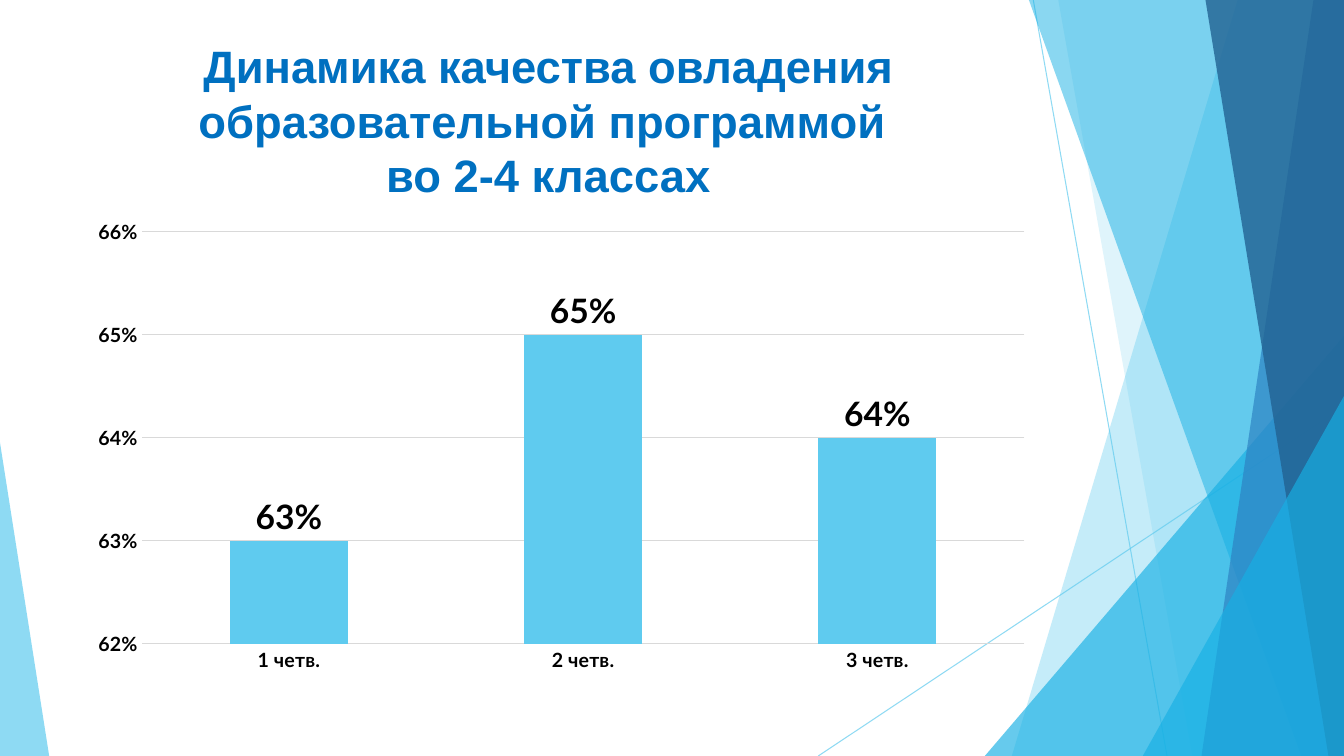
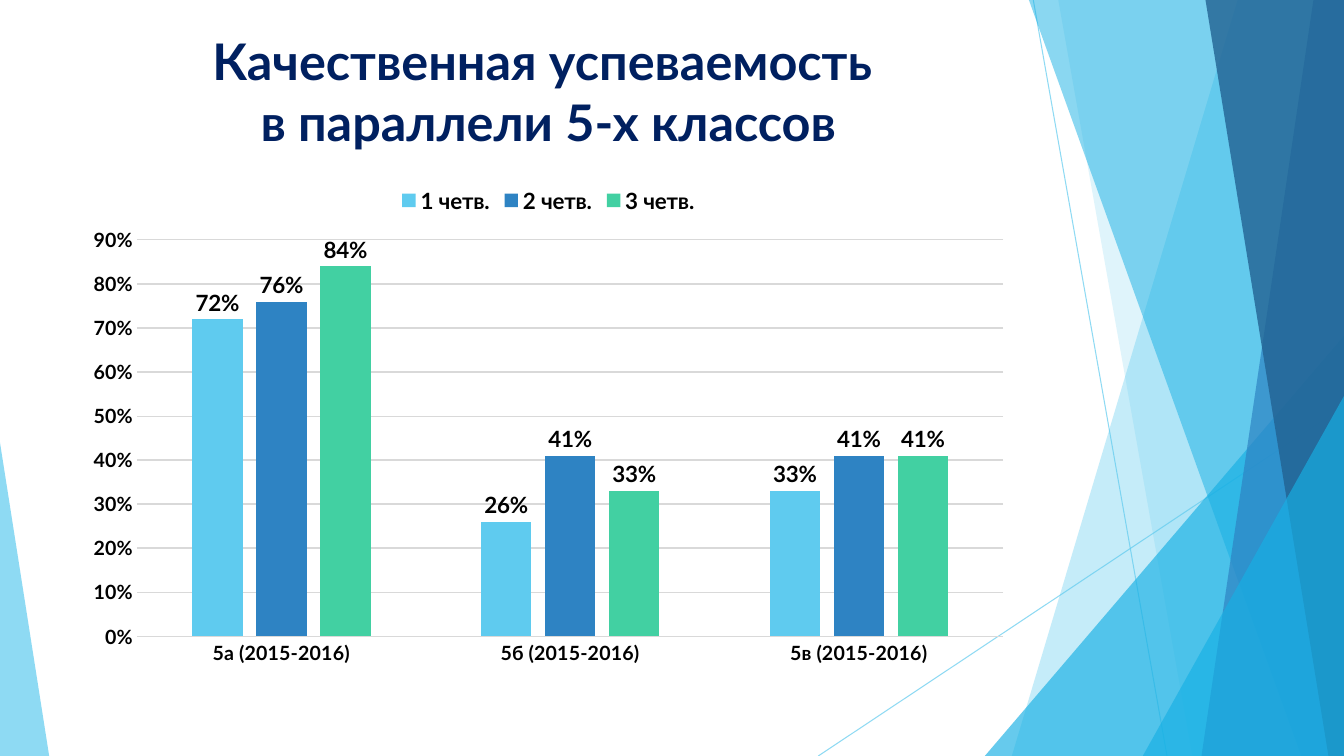
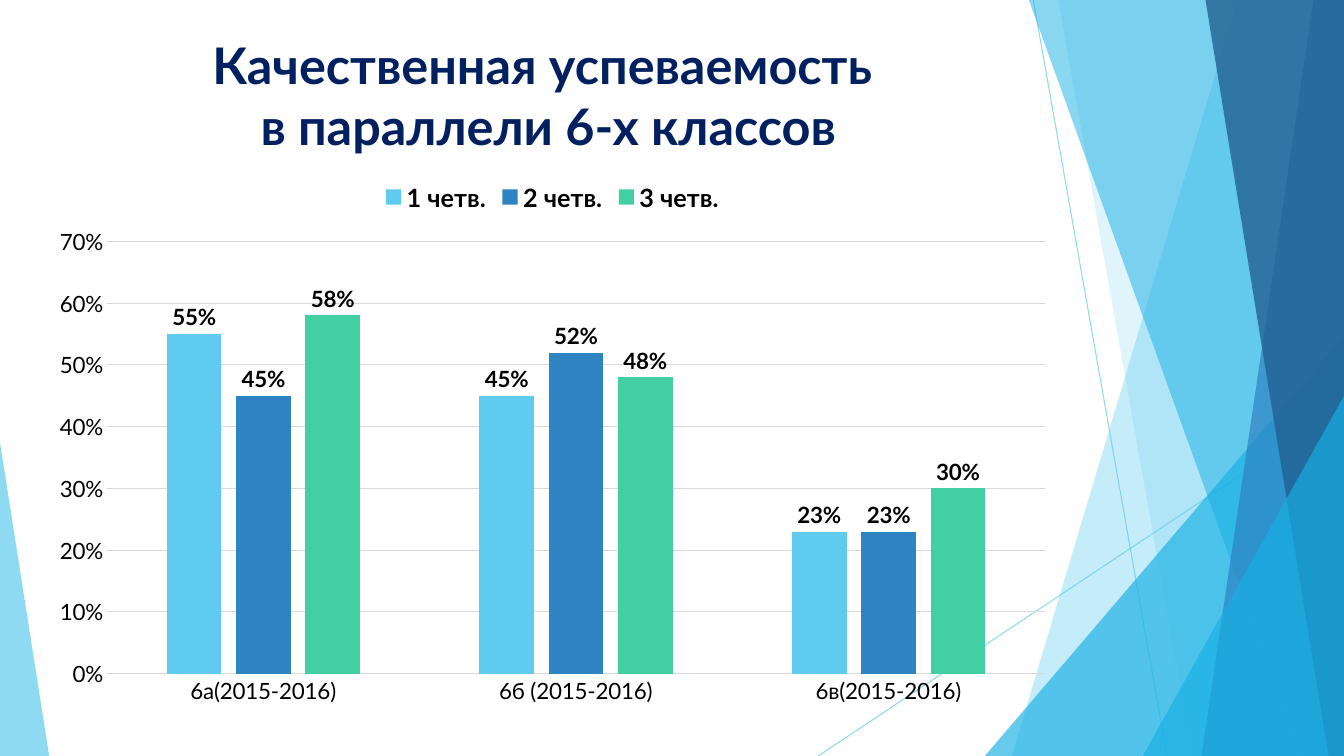
import dataclasses

import lxml.etree
import pptx
import pptx.chart.data
import pptx.dml.color
import pptx.enum.chart
import pptx.enum.shapes
import pptx.enum.text
import pptx.oxml.ns
import pptx.util

Cm = pptx.util.Cm
Pt = pptx.util.Pt
RGBColor = pptx.dml.color.RGBColor

SKY = RGBColor(0x5F, 0xCB, 0xEF)
CYAN = RGBColor(0x17, 0xB0, 0xE4)
BLUE = RGBColor(0x2E, 0x83, 0xC3)
STEEL = RGBColor(0x22, 0x62, 0x92)
GREEN = RGBColor(0x42, 0xD0, 0xA2)
TITLE_BLUE = RGBColor(0x00, 0x70, 0xC0)
NAVY = RGBColor(0x00, 0x20, 0x60)
BLACK = RGBColor(0x00, 0x00, 0x00)
GRID = RGBColor(0xD9, 0xD9, 0xD9)

SLIDE_WIDTH = Cm(33.87)
SLIDE_HEIGHT = Cm(19.05)
TITLE_LEFT = Cm(1.88)
TITLE_WIDTH = Cm(23.88)
TITLE_BOTTOM = Cm(5.36)
FONT = "Lato"
PERCENT = "0%"
SERIES_COLORS = (SKY, BLUE, GREEN)
QUARTERS = ("1 четв.", "2 четв.", "3 четв.")


@dataclasses.dataclass
class Ray:
    """A thin line ending at the bottom edge of the slide."""
    start_x: float
    start_y: float
    end_x: float


@dataclasses.dataclass
class Band:
    """A full-height area from a slanted left side to the right slide edge."""
    top_x: float
    bottom_x: float
    color: RGBColor
    opacity: int


@dataclasses.dataclass
class Corner:
    """A triangle standing on the bottom edge; apex is 0 (left) or 1 (right)."""
    left: float
    top: float
    width: float
    apex: int
    color: RGBColor
    opacity: int


@dataclasses.dataclass
class Title:
    lines: tuple[str, ...]
    top: float
    size: float = 36
    font: str = FONT
    color: RGBColor = NAVY


@dataclasses.dataclass
class ColumnChart:
    box: tuple[float, float, float, float]
    categories: tuple[str, ...]
    series: dict[str, tuple[float, ...]]
    minimum: float
    maximum: float
    step: float
    gap: int = 219
    overlap: int = -27
    axis_size: int = 14
    axis_bold: bool = True
    label_size: int = 16
    legend_size: int | None = None
    category_line: bool = True
    inner_plot: tuple[float, float, float, float] | None = None


DECORATION = (
    Ray(26.04, 0, 29.41),
    Ray(33.87, 10.24, 20.62),
    Band(31.19, 25.5, SKY, 36),
    Band(26.67, 30.05, SKY, 20),
    Corner(24.82, 8.46, 9.05, 1, CYAN, 66),
    Band(25.93, 32.79, CYAN, 50),
    Band(33.1, 30.28, BLUE, 70),
    Band(30.38, 33.48, STEEL, 80),
    Corner(28.8, 9.98, 5.07, 1, CYAN, 66),
    Corner(0, 11.15, 1.24, 0, SKY, 70),
)

SLIDES = (
    (
        Title(("Динамика качества овладения образовательной программой ",
               "во 2-4 классах"), 0.84, 32.4, "Arial", TITLE_BLUE),
        ColumnChart((1.88, 5.36, 24.18, 11.94), QUARTERS,
                    {"Качество": (0.63, 0.65, 0.64)}, 0.62, 0.66, 0.01,
                    gap=150, overlap=0, label_size=24, category_line=False,
                    inner_plot=(0.07, 0.04, 0.92, 0.87)),
    ),
    (
        Title(("Качественная успеваемость ", "в параллели 5-х классов"), 0.64),
        ColumnChart((1.88, 4.42, 23.88, 12.57),
                    ("5а (2015-2016)", "5б (2015-2016)", "5в (2015-2016)"),
                    dict(zip(QUARTERS, ((0.72, 0.26, 0.33),
                                        (0.76, 0.41, 0.41),
                                        (0.84, 0.33, 0.41)))),
                    0, 0.9, 0.1, legend_size=16),
    ),
    (
        Title(("Качественная успеваемость ", "в параллели 6-х классов"), 0.74),
        ColumnChart((0.99, 4.27, 25.86, 13.74),
                    ("6а(2015-2016)", "6б (2015-2016)", "6в(2015-2016)"),
                    dict(zip(QUARTERS, ((0.55, 0.45, 0.23),
                                        (0.45, 0.52, 0.23),
                                        (0.58, 0.48, 0.3)))),
                    0, 0.7, 0.1, axis_size=16, axis_bold=False, legend_size=18),
    ),
)


def add_element(parent, tag: str, **attributes: str):
    return lxml.etree.SubElement(parent, pptx.oxml.ns.qn(tag), **attributes)


def set_opacity(shape, percent: int) -> None:
    for color in shape.element.iter(pptx.oxml.ns.qn("a:srgbClr")):
        add_element(color, "a:alpha", val=str(percent * 1000))


def draw_ray(shapes, ray: Ray) -> None:
    connector = shapes.add_connector(
        pptx.enum.shapes.MSO_CONNECTOR.STRAIGHT,
        Cm(ray.start_x), Cm(ray.start_y), Cm(ray.end_x), SLIDE_HEIGHT)
    connector.line.color.rgb = SKY
    connector.line.width = Pt(0.75)
    add_element(connector.element.spPr, "a:effectLst")
    set_opacity(connector, 70)


def draw_area(shapes, area: Band | Corner) -> None:
    if isinstance(area, Band):
        builder = shapes.build_freeform(Cm(area.top_x), 0)
        builder.add_line_segments((
            (SLIDE_WIDTH, 0), (SLIDE_WIDTH, SLIDE_HEIGHT),
            (Cm(area.bottom_x), SLIDE_HEIGHT)))
        shape = builder.convert_to_shape()
    else:
        shape = shapes.add_shape(
            pptx.enum.shapes.MSO_SHAPE.ISOSCELES_TRIANGLE,
            Cm(area.left), Cm(area.top),
            Cm(area.width), SLIDE_HEIGHT - Cm(area.top))
        shape.adjustments[0] = area.apex
    shape.shadow.inherit = False
    shape.fill.solid()
    shape.fill.fore_color.rgb = area.color
    shape.line.fill.background()
    set_opacity(shape, area.opacity)


def decorate_layout(layout, slide) -> None:
    """Draw the decoration on the slide, then move it into the shared layout."""
    for placeholder in list(layout.placeholders):
        if placeholder.placeholder_format.type != pptx.enum.shapes.PP_PLACEHOLDER.TITLE:
            layout.shapes.element.remove(placeholder.element)
    group = slide.shapes.add_group_shape()
    for part in DECORATION:
        if isinstance(part, Ray):
            draw_ray(group.shapes, part)
        else:
            draw_area(group.shapes, part)
    layout.shapes.element.insert(2, group.element)


def format_font(font, size: float, bold: bool, color: RGBColor = BLACK,
                name: str = FONT) -> None:
    font.size = Pt(size)
    font.bold = bold
    font.name = name
    font.color.rgb = color


def fill_title(shape, title: Title) -> None:
    shape.left, shape.top = TITLE_LEFT, Cm(title.top)
    shape.width, shape.height = TITLE_WIDTH, TITLE_BOTTOM - Cm(title.top)
    frame = shape.text_frame
    frame.text = "\v".join(title.lines)
    frame.word_wrap = True
    frame.auto_size = pptx.enum.text.MSO_AUTO_SIZE.NONE
    frame.vertical_anchor = pptx.enum.text.MSO_ANCHOR.TOP
    paragraph = frame.paragraphs[0]
    paragraph.alignment = pptx.enum.text.PP_ALIGN.CENTER
    for run in paragraph.runs:
        format_font(run.font, title.size, True, title.color, title.font)


def set_inner_plot(chart, fractions: tuple[float, float, float, float]) -> None:
    """Fix the plot area, without its axis labels, as fractions of the chart."""
    plot_area = chart.element.chart.plotArea
    for old_layout in plot_area.findall(pptx.oxml.ns.qn("c:layout")):
        plot_area.remove(old_layout)
    layout = add_element(plot_area, "c:layout")
    plot_area.insert(0, layout)
    manual = add_element(layout, "c:manualLayout")
    add_element(manual, "c:layoutTarget", val="inner")
    add_element(manual, "c:xMode", val="edge")
    add_element(manual, "c:yMode", val="edge")
    for side, fraction in zip("xywh", fractions):
        add_element(manual, f"c:{side}", val=str(fraction))


def format_axes(chart, column_chart: ColumnChart) -> None:
    for axis in (chart.category_axis, chart.value_axis):
        axis.major_tick_mark = pptx.enum.chart.XL_TICK_MARK.NONE
        axis.minor_tick_mark = pptx.enum.chart.XL_TICK_MARK.NONE
        axis.format.line.fill.background()
        format_font(axis.tick_labels.font, column_chart.axis_size,
                    column_chart.axis_bold)
    if column_chart.category_line:
        chart.category_axis.format.line.color.rgb = GRID
        chart.category_axis.format.line.width = Pt(0.75)
    value_axis = chart.value_axis
    value_axis.minimum_scale = column_chart.minimum
    value_axis.maximum_scale = column_chart.maximum
    value_axis.major_unit = column_chart.step
    value_axis.tick_labels.number_format = PERCENT
    value_axis.tick_labels.number_format_is_linked = False
    value_axis.major_gridlines.format.line.color.rgb = GRID
    value_axis.major_gridlines.format.line.width = Pt(0.75)


def format_columns(plot, column_chart: ColumnChart) -> None:
    plot.vary_by_categories = False
    plot.gap_width = column_chart.gap
    plot.overlap = column_chart.overlap
    for series, color in zip(plot.series, SERIES_COLORS):
        series.format.fill.solid()
        series.format.fill.fore_color.rgb = color
        labels = series.data_labels
        labels.show_value = True
        labels.number_format = PERCENT
        labels.number_format_is_linked = False
        labels.position = pptx.enum.chart.XL_LABEL_POSITION.OUTSIDE_END
        format_font(labels.font, column_chart.label_size, True)


def add_column_chart(slide, column_chart: ColumnChart) -> None:
    data = pptx.chart.data.CategoryChartData(number_format=PERCENT)
    data.categories = column_chart.categories
    for name, values in column_chart.series.items():
        data.add_series(name, values)
    chart = slide.shapes.add_chart(
        pptx.enum.chart.XL_CHART_TYPE.COLUMN_CLUSTERED,
        *map(Cm, column_chart.box), data).chart
    chart.has_title = False
    format_font(chart.font, column_chart.axis_size, column_chart.axis_bold)
    format_axes(chart, column_chart)
    format_columns(chart.plots[0], column_chart)
    chart.has_legend = column_chart.legend_size is not None
    if chart.has_legend:
        chart.legend.position = pptx.enum.chart.XL_LEGEND_POSITION.TOP
        chart.legend.include_in_layout = False
        format_font(chart.legend.font, column_chart.legend_size, True)
    if column_chart.inner_plot:
        set_inner_plot(chart, column_chart.inner_plot)


def main() -> None:
    presentation = pptx.Presentation()
    presentation.slide_width = SLIDE_WIDTH
    presentation.slide_height = SLIDE_HEIGHT
    layout = presentation.slide_layouts.get_by_name("Title Only")
    for number, (title, column_chart) in enumerate(SLIDES):
        slide = presentation.slides.add_slide(layout)
        if number == 0:
            decorate_layout(layout, slide)
        fill_title(slide.shapes.title, title)
        add_column_chart(slide, column_chart)
    presentation.save("out.pptx")


if __name__ == "__main__":
    main()
